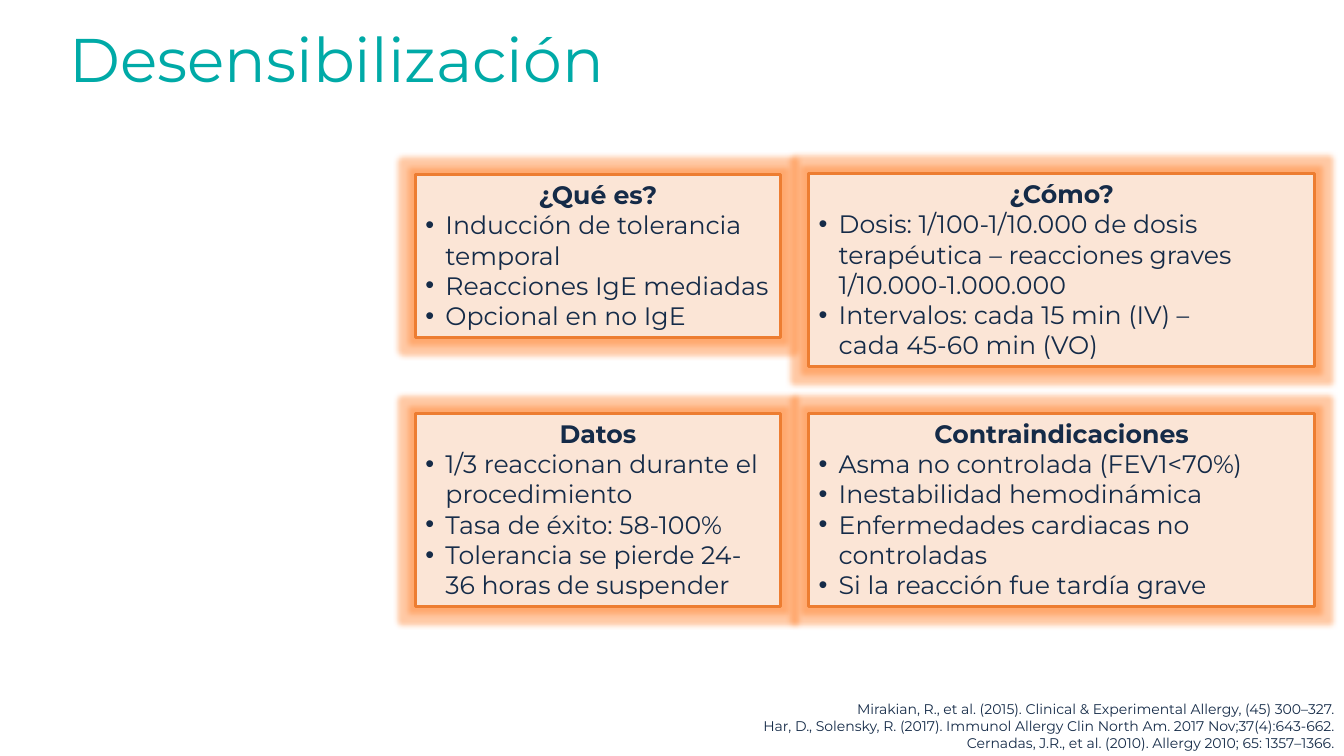
from dataclasses import dataclass

from lxml import etree
from pptx import Presentation
from pptx.dml.color import RGBColor
from pptx.enum.shapes import MSO_SHAPE
from pptx.enum.text import MSO_ANCHOR, MSO_AUTO_SIZE, PP_ALIGN
from pptx.oxml.ns import qn
from pptx.util import Inches, Pt

RECTANGLE = MSO_SHAPE.RECTANGLE
TOP, MIDDLE = MSO_ANCHOR.TOP, MSO_ANCHOR.MIDDLE
GROW = MSO_AUTO_SIZE.SHAPE_TO_FIT_TEXT
LEFT, CENTER, RIGHT = PP_ALIGN.LEFT, PP_ALIGN.CENTER, PP_ALIGN.RIGHT

FONT = "Montserrat"
COLORS = {"title": "00AAA7", "text": "152B48", "card": "FBE5D6", "border": "ED7D31"}
BULLET_INDENT = Inches(0.2)
GLOW_RADIUS = Pt(8)

LEFT_COLUMN, RIGHT_COLUMN = (4.12, 3.62), (8.02, 5.02)


@dataclass
class Card:
    column: tuple[float, float]
    top: float
    height: float
    heading: str
    items: list[str]


CARDS = [
    Card(LEFT_COLUMN, 1.73, 1.62, "¿Qué es?", [
        "Inducción de tolerancia temporal",
        "Reacciones IgE mediadas",
        "Opcional en no IgE",
    ]),
    Card(LEFT_COLUMN, 4.1, 1.92, "Datos", [
        "1/3 reaccionan durante el procedimiento",
        "Tasa de éxito: 58-100%",
        "Tolerancia se pierde 24-36 horas de suspender",
    ]),
    Card(RIGHT_COLUMN, 1.72, 1.92, "¿Cómo?", [
        "Dosis: 1/100-1/10.000 de dosis terapéutica – reacciones graves 1/10.000-1.000.000",
        "Intervalos: cada 15 min (IV) – \ncada 45-60 min (VO)",
    ]),
    Card(RIGHT_COLUMN, 4.1, 1.92, "Contraindicaciones", [
        "Asma no controlada (FEV1<70%)",
        "Inestabilidad hemodinámica",
        "Enfermedades cardiacas no controladas",
        "Si la reacción fue tardía grave",
    ]),
]

REFERENCES = [
    "Mirakian, R., et al. (2015). Clinical & Experimental Allergy, (45) 300–327.",
    "Har, D., Solensky, R. (2017). Immunol Allergy Clin North Am. 2017 Nov;37(4):643-662.",
    "Cernadas, J.R., et al. (2010). Allergy 2010; 65: 1357–1366.",
]


def rgb(name: str) -> RGBColor:
    return RGBColor.from_string(COLORS[name])


def add_bullet(paragraph) -> None:
    properties = paragraph._p.get_or_add_pPr()
    properties.set("marL", str(BULLET_INDENT))
    properties.set("indent", str(-BULLET_INDENT))
    etree.SubElement(properties, qn("a:buFont"), typeface="Arial")
    etree.SubElement(properties, qn("a:buChar"), char="•")


def write(paragraph, text: str, *, size: float, color: str = "text", bold: bool = False,
          align: PP_ALIGN = LEFT, bullet: bool = False) -> None:
    """Fill a paragraph with text in one format; a newline becomes a line break."""
    paragraph.text = text
    paragraph.alignment = align
    if bullet:
        add_bullet(paragraph)
    for run in paragraph.runs:
        run.font.name = FONT
        run.font.size = Pt(size)
        run.font.bold = bold
        run.font.color.rgb = rgb(color)


def add_glow(shape) -> None:
    properties = shape._element.spPr
    for effects in properties.findall(qn("a:effectLst")):
        properties.remove(effects)
    effects = etree.SubElement(properties, qn("a:effectLst"))
    glow = etree.SubElement(effects, qn("a:glow"), rad=str(GLOW_RADIUS))
    color = etree.SubElement(glow, qn("a:srgbClr"), val=COLORS["border"])
    etree.SubElement(color, qn("a:satMod"), val="175000")
    etree.SubElement(color, qn("a:alpha"), val="40000")


def add_card(slide, card: Card) -> None:
    left, width = card.column
    shape = slide.shapes.add_shape(
        RECTANGLE, Inches(left), Inches(card.top), Inches(width), Inches(card.height))
    shape.fill.solid()
    shape.fill.fore_color.rgb = rgb("card")
    shape.line.color.rgb = rgb("border")
    shape.line.width = Pt(2.25)
    add_glow(shape)

    frame = shape.text_frame
    frame.word_wrap = True
    frame.auto_size = GROW
    frame.vertical_anchor = TOP
    write(frame.paragraphs[0], card.heading, size=18, bold=True, align=CENTER)
    for item in card.items:
        write(frame.add_paragraph(), item, size=18, bullet=True)


def add_title(slide, text: str) -> None:
    box = slide.shapes.add_textbox(Inches(0.59), Inches(-0.1), Inches(11.5), Inches(1.45))
    frame = box.text_frame
    frame.word_wrap = True
    frame.vertical_anchor = MIDDLE
    write(frame.paragraphs[0], text, size=44, color="title")
    frame.paragraphs[0].line_spacing = 0.9


def add_references(slide, references: list[str]) -> None:
    box = slide.shapes.add_textbox(Inches(0), Inches(6.9), Inches(13.33), Inches(0.61))
    frame = box.text_frame
    frame.word_wrap = True
    frame.auto_size = GROW
    for index, reference in enumerate(references):
        paragraph = frame.add_paragraph() if index else frame.paragraphs[0]
        write(paragraph, reference, size=10, align=RIGHT)


def main() -> None:
    presentation = Presentation()
    presentation.slide_width = Inches(13.33)
    presentation.slide_height = Inches(7.5)
    slide = presentation.slides.add_slide(presentation.slide_layouts[6])
    add_title(slide, "Desensibilización")
    for card in CARDS:
        add_card(slide, card)
    add_references(slide, REFERENCES)
    presentation.save("out.pptx")


if __name__ == "__main__":
    main()
